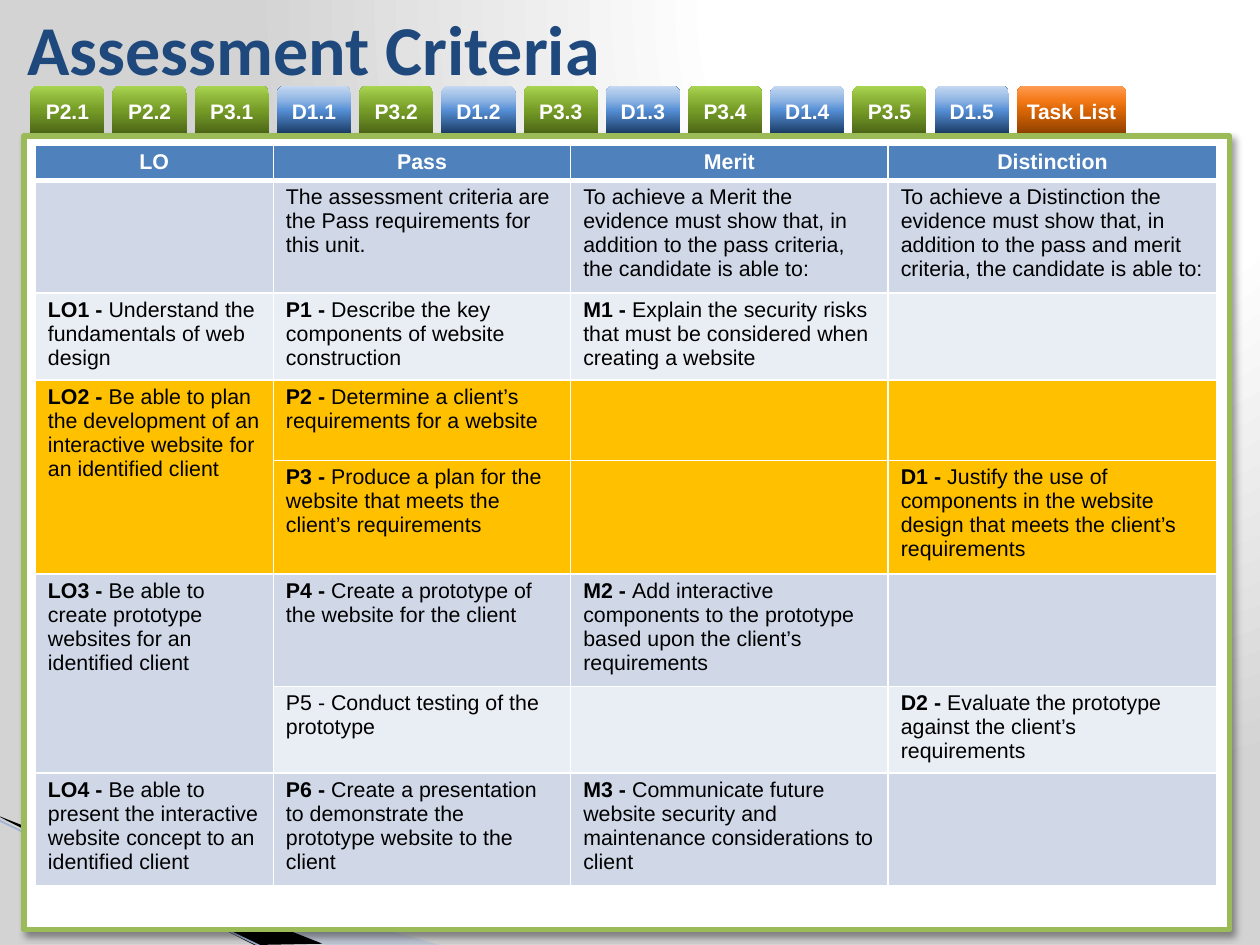
import pptx
import pptx.util
import pptx.dml.color
import pptx.enum.shapes
import pptx.enum.text
import pptx.oxml
import pptx.oxml.ns

Inches, Pt = pptx.util.Inches, pptx.util.Pt
SHAPE = pptx.enum.shapes.MSO_SHAPE
ALIGN = pptx.enum.text.PP_ALIGN
MIDDLE = pptx.enum.text.MSO_ANCHOR.MIDDLE

# Content
TITLE = "Assessment Criteria"
TABS = ["P2.1", "P2.2", "P3.1", "D1.1", "P3.2", "D1.2", "P3.3",
        "D1.3", "P3.4", "D1.4", "P3.5", "D1.5", "Task List"]
COLS = [1.89, 2.36, 2.52, 2.61]
# Row height, fill, cells; the part before "|" is bold, None joins the cell above
ROWS = [
    (0.28, "head", ["LO|", "Pass|", "Merit|", "Distinction|"]),
    (0.87, "band", [
        "",
        "The assessment criteria are the Pass requirements for this unit.",
        "To achieve a Merit the evidence must show that, in addition to the "
        "pass criteria, the candidate is able to:",
        "To achieve a Distinction the evidence must show that, in addition to "
        "the pass and merit criteria, the candidate is able to:"]),
    (0.67, "pale", [
        "LO1 - |Understand the fundamentals of web design",
        "P1 - |Describe the key components of website construction",
        "M1 - |Explain the security risks that must be considered when "
        "creating a website",
        ""]),
    (0.64, "gold", [
        "LO2 - |Be able to plan the development of an interactive website "
        "for an identified client",
        "P2 - |Determine a client’s requirements for a website",
        "", ""]),
    (0.9, "gold", [
        None,
        "P3 - |Produce a plan for the website that meets the client’s "
        "requirements",
        "",
        "D1 - |Justify the use of components in the website design that "
        "meets the client’s requirements"]),
    (0.86, "band", [
        "LO3 - |Be able to create prototype websites for an identified client",
        "P4 - |Create a prototype of the website for the client",
        "M2 - |Add interactive components to the prototype based upon the "
        "client’s requirements",
        ""]),
    (0.67, "pale", [
        None,
        "P5 - Conduct testing of the prototype",
        "",
        "D2 - |Evaluate the prototype against the client’s requirements"]),
    (0.86, "band", [
        "LO4 - |Be able to present the interactive website concept to an "
        "identified client",
        "P6 - |Create a presentation to demonstrate the prototype website "
        "to the client",
        "M3 - |Communicate future website security and maintenance "
        "considerations to client",
        ""]),
]
WEDGES = [
    ("mist", 40, [(-0.01, 6.5), (3.49, 7.5), (2.59, 7.5), (-0.01, 6.49)]),
    ("black", 100, [(0, 6.48), (2.56, 7.49), (2.02, 7.5), (0.01, 6.49)]),
]
HEX = {"title": "1F497D", "white": "FFFFFF", "black": "000000",
       "head": "4F81BD", "band": "D0D8E8", "pale": "E9EDF4", "gold": "FFC000",
       "frame": "9BBB59", "mist": "A7B9DB", "edge": "9EB3D6"}
FADES = {  # position in percent, colour
    "P": [(0, "4A6316"), (50, "769C27"), (70, "89B137"), (100, "A9D651")],
    "D": [(0, "17375E"), (50, "558ED5"), (70, "8EB4E3"), (100, "C6D9F1")],
    "T": [(0, "8B3F00"), (50, "DA6606"), (70, "F47917"), (100, "FF9C54")],
    "back": [(0, "FFFFFF"), (40, "FFFFFF"), (100, "D3D3D3")],
}
UPWARD = '<a:lin ang="16200000" scaled="0"/>'
RADIAL = ('<a:path path="circle">'
          '<a:fillToRect l="65000" t="0" r="0" b="98000"/></a:path>')


def rgb(name):
    return pptx.dml.color.RGBColor.from_string(HEX[name])


def xml(tag, inner="", attrs=""):
    ns = pptx.oxml.ns.nsdecls("a")
    return pptx.oxml.parse_xml(f"<a:{tag} {ns} {attrs}>{inner}</a:{tag}>")


def fade(fill, root, key, shade):
    fill.gradient()
    old = root.xpath(".//a:gradFill")[0]
    stops = "".join(f'<a:gs pos="{pos * 1000}"><a:srgbClr val="{tone}"/></a:gs>'
                    for pos, tone in FADES[key])
    new = xml("gradFill", f"<a:gsLst>{stops}</a:gsLst>{shade}", 'rotWithShape="1"')
    old.getparent().replace(old, new)


def style(run, size, color, bold, face="Arial"):
    run.font.size, run.font.bold, run.font.name = Pt(size), bold, face
    run.font.color.rgb = rgb(color)


def border(cell, row):
    props = cell._tc.get_or_add_tcPr()
    for spot, side in enumerate("LRTB"):
        thick = (row, side) in ((0, "B"), (1, "T"))
        tint = f'<a:solidFill><a:srgbClr val="{HEX["white"]}"/></a:solidFill>'
        wide = Pt(3 if thick else 1)
        props.insert(spot, xml(f"ln{side}", tint, f'w="{wide}"'))


prs = pptx.Presentation()
prs.slide_width, prs.slide_height = Inches(10), Inches(7.5)
slide = prs.slides.add_slide(prs.slide_layouts[6])
shapes = slide.shapes

# Background and corner wedges
fade(slide.background.fill, slide._element, "back", RADIAL)
for color, alpha, points in WEDGES:
    dots = [(Inches(x), Inches(y)) for x, y in points]
    path = shapes.build_freeform(*dots[0])
    path.add_line_segments(dots[1:], close=True)
    wedge = path.convert_to_shape()
    wedge.shadow.inherit = False
    wedge.fill.solid()
    wedge.fill.fore_color.rgb = rgb(color)
    wedge.line.fill.background()
    if alpha < 100:
        tone = wedge._element.spPr.xpath("./a:solidFill/a:srgbClr")[0]
        tone.append(xml("alpha", attrs=f'val="{alpha * 1000}"'))
edge = shapes.add_connector(pptx.enum.shapes.MSO_CONNECTOR.STRAIGHT,
                            Inches(-0.01), Inches(6.51), Inches(2.09), Inches(7.52))
edge.line.color.rgb, edge.line.width = rgb("edge"), Pt(0.95)
edge._element.spPr.append(xml("effectLst"))

# Tabs
for i, label in enumerate(TABS):
    wide = 0.87 if label == TABS[-1] else 0.59
    tab = shapes.add_shape(SHAPE.ROUND_2_SAME_RECTANGLE, Inches(0.24 + i * 7.83 / 12),
                           Inches(0.68), Inches(wide), Inches(0.39))
    tab.shadow.inherit = False
    fade(tab.fill, tab._element, label[0], UPWARD)
    tab.line.fill.background()
    frame = tab.text_frame
    frame.margin_left = frame.margin_right = frame.margin_top = frame.margin_bottom = 0
    frame.vertical_anchor = MIDDLE
    frame.text = label
    frame.paragraphs[0].alignment = ALIGN.CENTER
    style(frame.paragraphs[0].runs[0], 12, "white", True)

# Framed panel
panel = shapes.add_shape(SHAPE.RECTANGLE, Inches(0.19), Inches(1.08),
                         Inches(9.57), Inches(6.3))
panel.fill.solid()
panel.fill.fore_color.rgb = rgb("white")
panel.line.color.rgb, panel.line.width = rgb("frame"), Pt(3)
panel._element.spPr.append(xml(
    "effectLst",
    f'<a:outerShdw blurRad="{Pt(4)}" dist="{Pt(3)}" dir="2700000" algn="tl">'
    f'<a:srgbClr val="{HEX["black"]}"><a:alpha val="40000"/></a:srgbClr></a:outerShdw>'))

# Title
box = shapes.add_textbox(Inches(0.12), 0, Inches(8.43), Inches(0.76))
box.text_frame.word_wrap = True
box.text_frame.vertical_anchor = MIDDLE
box.text_frame.text = TITLE
style(box.text_frame.paragraphs[0].runs[0], 40, "title", True, "Calibri")

# Criteria table
table = shapes.add_table(len(ROWS), len(COLS), Inches(0.28), Inches(1.15),
                         Inches(sum(COLS)), Inches(sum(r[0] for r in ROWS))).table
for c, wide in enumerate(COLS):
    table.columns[c].width = Inches(wide)
for r, (high, color, texts) in enumerate(ROWS):
    table.rows[r].height = Inches(high)
    for c, text in enumerate(texts):
        cell = table.cell(r, c)
        cell.margin_top = cell.margin_bottom = Inches(0.04)
        cell.fill.solid()
        cell.fill.fore_color.rgb = rgb(color)
        border(cell, r)
        if text is None:
            table.cell(r - 1, c).merge(cell)
            continue
        para = cell.text_frame.paragraphs[0]
        para.alignment = ALIGN.LEFT if r else ALIGN.CENTER
        para.font.size = Pt(12.2)
        lead, mark, rest = text.rpartition("|")
        for part, bold in ((lead, True), (rest, False)):
            if part:
                run = para.add_run()
                run.text = part
                style(run, 12.2, "black" if r else "white", bold)

prs.save("out.pptx")
